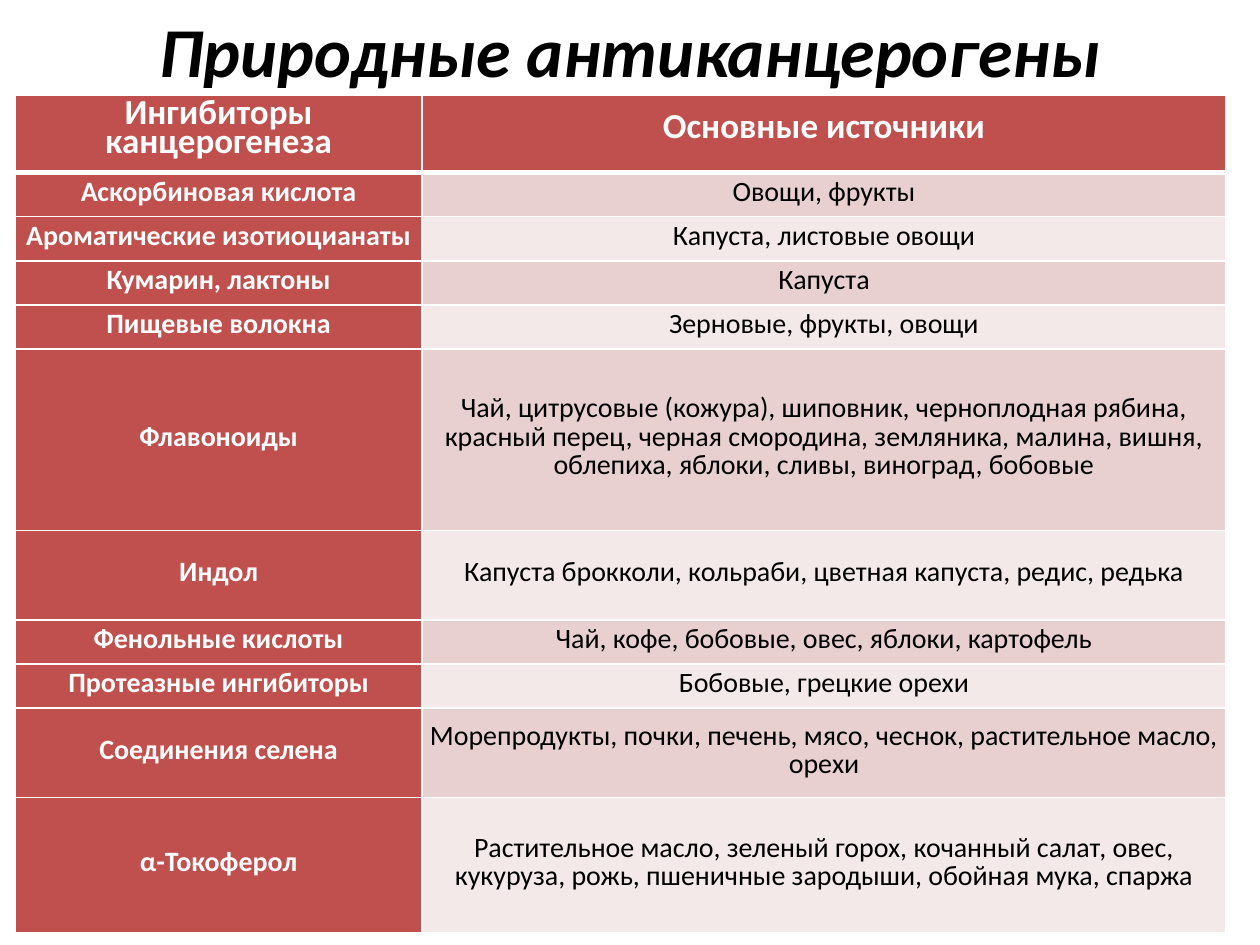
import dataclasses

import pptx
import pptx.dml.color
import pptx.enum.text
import pptx.oxml
import pptx.oxml.ns
import pptx.util
from pptx.util import Inches

FONT = "Calibri"
RED, BLACK, WHITE = "C0504D", "000000", "FFFFFF"
BANDS = ("E8D0D0", "F4E9E9")
COLUMN_WIDTHS = (3.23, 6.38)


@dataclasses.dataclass
class Row:
    inhibitor: str
    sources: str
    height: float = 0.35


@dataclasses.dataclass
class CellStyle:
    fill: str
    color: str = WHITE
    size: int = 16
    bold: bool = True
    bottom: int = 1


HEADER = Row("Ингибиторы канцерогенеза", "Основные источники", 0.61)
ROWS = [
    Row("Аскорбиновая кислота", "Овощи, фрукты"),
    Row("Ароматические изотиоцианаты", "Капуста, листовые овощи"),
    Row("Кумарин, лактоны", "Капуста"),
    Row("Пищевые волокна", "Зерновые, фрукты, овощи"),
    Row("Флавоноиды",
        "Чай, цитрусовые (кожура), шиповник, черноплодная рябина, "
        "красный перец, черная смородина, земляника, малина, вишня, "
        "облепиха, яблоки, сливы, виноград, бобовые", 1.44),
    Row("Индол",
        "Капуста брокколи, кольраби, цветная капуста, редис, редька", 0.71),
    Row("Фенольные кислоты", "Чай, кофе, бобовые, овес, яблоки, картофель"),
    Row("Протеазные ингибиторы", "Бобовые, грецкие орехи"),
    Row("Соединения селена",
        "Морепродукты, почки, печень, мясо, чеснок, растительное масло, "
        "орехи", 0.71),
    Row("α-Токоферол",
        "Растительное масло, зеленый горох, кочанный салат, овес, "
        "кукуруза, рожь, пшеничные зародыши, обойная мука, спаржа", 1.07),
]


def rgb(color: str) -> pptx.dml.color.RGBColor:
    return pptx.dml.color.RGBColor.from_string(color)


def write(tf, text: str, size: int, color: str, bold: bool, italic: bool = False):
    """Put one centred paragraph in a text frame and return it."""
    tf.text = text
    tf.word_wrap = True
    p = tf.paragraphs[0]
    p.alignment = pptx.enum.text.PP_ALIGN.CENTER
    font = p.runs[0].font
    font.name, font.size = FONT, pptx.util.Pt(size)
    font.bold, font.italic = bold, italic
    font.color.rgb = rgb(color)
    return p


def set_borders(cell, bottom: int) -> None:
    """Draw white cell borders; their XML must come before the fill."""
    tc_pr = cell._tc.get_or_add_tcPr()
    widths = {"lnL": 1, "lnR": 1, "lnT": 1, "lnB": bottom}
    for i, (side, width) in enumerate(widths.items()):
        tc_pr.insert(i, pptx.oxml.parse_xml(
            f'<a:{side} {pptx.oxml.ns.nsdecls("a")} w="{pptx.util.Pt(width)}">'
            f'<a:solidFill><a:srgbClr val="{WHITE}"/></a:solidFill></a:{side}>'))


def fill_cell(cell, text: str, style: CellStyle) -> None:
    cell.margin_left = cell.margin_right = 0
    cell.margin_top = cell.margin_bottom = 0
    cell.vertical_anchor = pptx.enum.text.MSO_ANCHOR.MIDDLE
    cell.fill.solid()
    cell.fill.fore_color.rgb = rgb(style.fill)
    p = write(cell.text_frame, text, style.size, style.color, style.bold)
    p.line_spacing = pptx.util.Pt(16.2)
    p.space_after = pptx.util.Pt(8)
    set_borders(cell, style.bottom)


def add_title(s, text: str) -> None:
    sp = s.shapes.add_textbox(Inches(0.5), Inches(0.05), Inches(9), Inches(0.69))
    tf = sp.text_frame
    tf.vertical_anchor = pptx.enum.text.MSO_ANCHOR.MIDDLE
    write(tf, text, 40, BLACK, bold=True, italic=True)


def add_inhibitor_table(s) -> None:
    rows = [HEADER, *ROWS]
    table = s.shapes.add_table(
        len(rows), len(COLUMN_WIDTHS), Inches(0.12), Inches(0.76),
        Inches(sum(COLUMN_WIDTHS)), Inches(sum(row.height for row in rows))).table
    for column, width in zip(table.columns, COLUMN_WIDTHS):
        column.width = Inches(width)

    header = CellStyle(RED, size=20, bottom=3)
    for i, row in enumerate(rows):
        table.rows[i].height = Inches(row.height)
        if i == 0:
            styles = (header, header)
        else:
            band = BANDS[(i - 1) % 2]
            styles = (CellStyle(RED), CellStyle(band, BLACK, bold=False))
        for j, text in enumerate((row.inhibitor, row.sources)):
            fill_cell(table.cell(i, j), text, styles[j])


def main() -> None:
    prs = pptx.Presentation()
    prs.slide_width, prs.slide_height = Inches(10), Inches(7.5)
    s = prs.slides.add_slide(prs.slide_layouts[6])

    # Title
    add_title(s, "Природные антиканцерогены")

    # Inhibitors and their sources
    add_inhibitor_table(s)

    prs.save("out.pptx")


if __name__ == "__main__":
    main()
